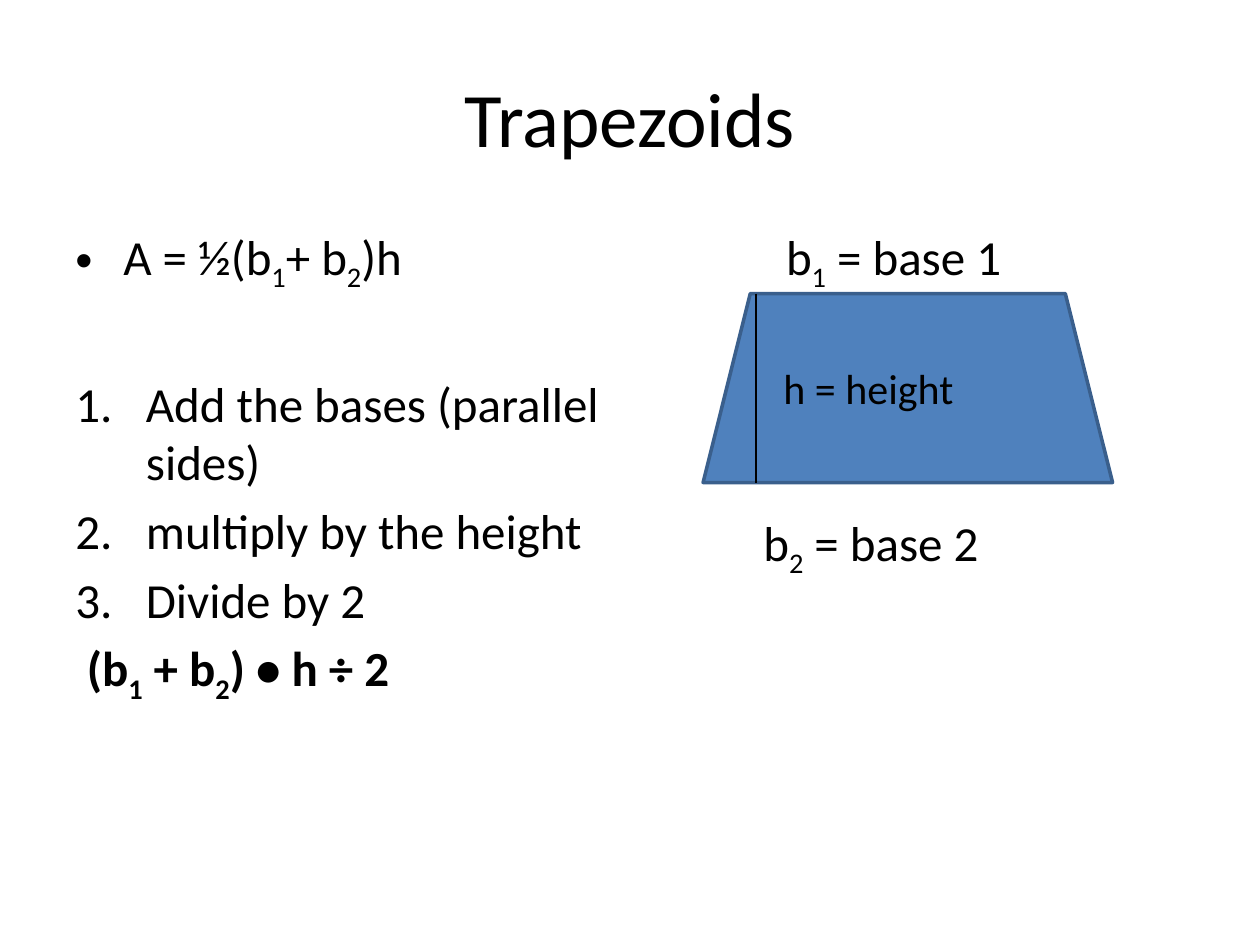
"""Build a slide on the area of a trapezoid, with steps and a labelled diagram."""
import pptx
import pptx.dml.color
import pptx.enum.shapes
import pptx.enum.text
import pptx.oxml.ns
import pptx.util
from lxml import etree
from pptx.util import Inches, Pt

COLORS = {"text": "000000", "fill": "4F81BD", "outline": "3A5F8C"}
COLORS = {name: pptx.dml.color.RGBColor.from_string(value) for name, value in COLORS.items()}
qn = pptx.oxml.ns.qn


def style(para, size, bold=False):
    para.font.name = "Calibri"
    para.font.size = Pt(size)
    para.font.bold = bold
    para.font.color.rgb = COLORS["text"]


def add_lines(left, lines):
    box = page.shapes.add_textbox(Inches(left), Inches(1.75), Inches(4.42), Inches(4.95))
    frame = box.text_frame
    frame.word_wrap = True
    for index, (parts, margin, hanging, bullet, before, bold) in enumerate(lines):
        para = frame.add_paragraph() if index else frame.paragraphs[0]
        properties = para._p.get_or_add_pPr()
        properties.set("marL", str(Inches(margin)))
        properties.set("indent", str(-Inches(hanging)))
        if bullet == "•":
            etree.SubElement(properties, qn("a:buFont"), typeface="Arial")
            etree.SubElement(properties, qn("a:buChar"), char=bullet)
        elif bullet:
            etree.SubElement(properties, qn("a:buFont"), typeface="+mj-lt")
            etree.SubElement(properties, qn("a:buAutoNum"), type=bullet)
        para.space_before = Pt(before)
        style(para, 28, bold)
        for position, part in enumerate(parts):
            span = para.add_run()
            span.text = part
            if position % 2:
                span.font._element.set("baseline", "-25000")


deck = pptx.Presentation()
deck.slide_width, deck.slide_height = Inches(10), Inches(7.5)
page = deck.slides.add_slide(deck.slide_layouts[5])

title = page.shapes.title
title.left, title.top, title.width, title.height = map(Inches, (0.5, 0.3, 9, 1.25))
title.text_frame.text = "Trapezoids"
title.text_frame.vertical_anchor = pptx.enum.text.MSO_ANCHOR.MIDDLE
title.text_frame.paragraphs[0].alignment = pptx.enum.text.PP_ALIGN.CENTER
style(title.text_frame.paragraphs[0], 44)

gap = 5.6
blank_line = 39.8
number = "arabicPeriod"
add_lines(0.5, [
    (["A = ½(b", "1", "+ b", "2", ")h"], 0.38, 0.38, "•", gap, False),
    (["Add the bases (parallel sides)"], 0.56, 0.56, number, gap + blank_line, False),
    (["multiply by the height"], 0.56, 0.56, number, gap, False),
    (["Divide by 2"], 0.56, 0.56, number, gap, False),
    (["(b", "1", " + b", "2", ") • h ÷ 2"], 0.09, 0, None, gap, True),
])
add_lines(5.08, [
    (["b", "1", " = base 1"], 1.06, 0, None, gap, False),
    (["b", "2", " = base 2"], 0.88, 0, None, gap + 3 * blank_line, False),
])

trapezoid = page.shapes.add_shape(
    pptx.enum.shapes.MSO_SHAPE.TRAPEZOID, Inches(5.58), Inches(2.33), Inches(3.25), Inches(1.5))
trapezoid.shadow.inherit = False
trapezoid.fill.solid()
trapezoid.fill.fore_color.rgb = COLORS["fill"]
trapezoid.line.color.rgb = COLORS["outline"]
trapezoid.line.width = Pt(2)

height_line = page.shapes.add_connector(
    pptx.enum.shapes.MSO_CONNECTOR.STRAIGHT, Inches(6), Inches(2.33), Inches(6), Inches(3.83))
height_line.line.color.rgb = COLORS["text"]
height_line.line.width = Pt(0.75)
etree.SubElement(height_line._element.spPr, qn("a:effectLst"))

label = page.shapes.add_textbox(Inches(6.12), Inches(2.83), Inches(2.17), Inches(0.5))
label.text_frame.word_wrap = True
label.text_frame.auto_size = pptx.enum.text.MSO_AUTO_SIZE.SHAPE_TO_FIT_TEXT
label.text_frame.text = "h = height"
style(label.text_frame.paragraphs[0], 24)

deck.save("out.pptx")
